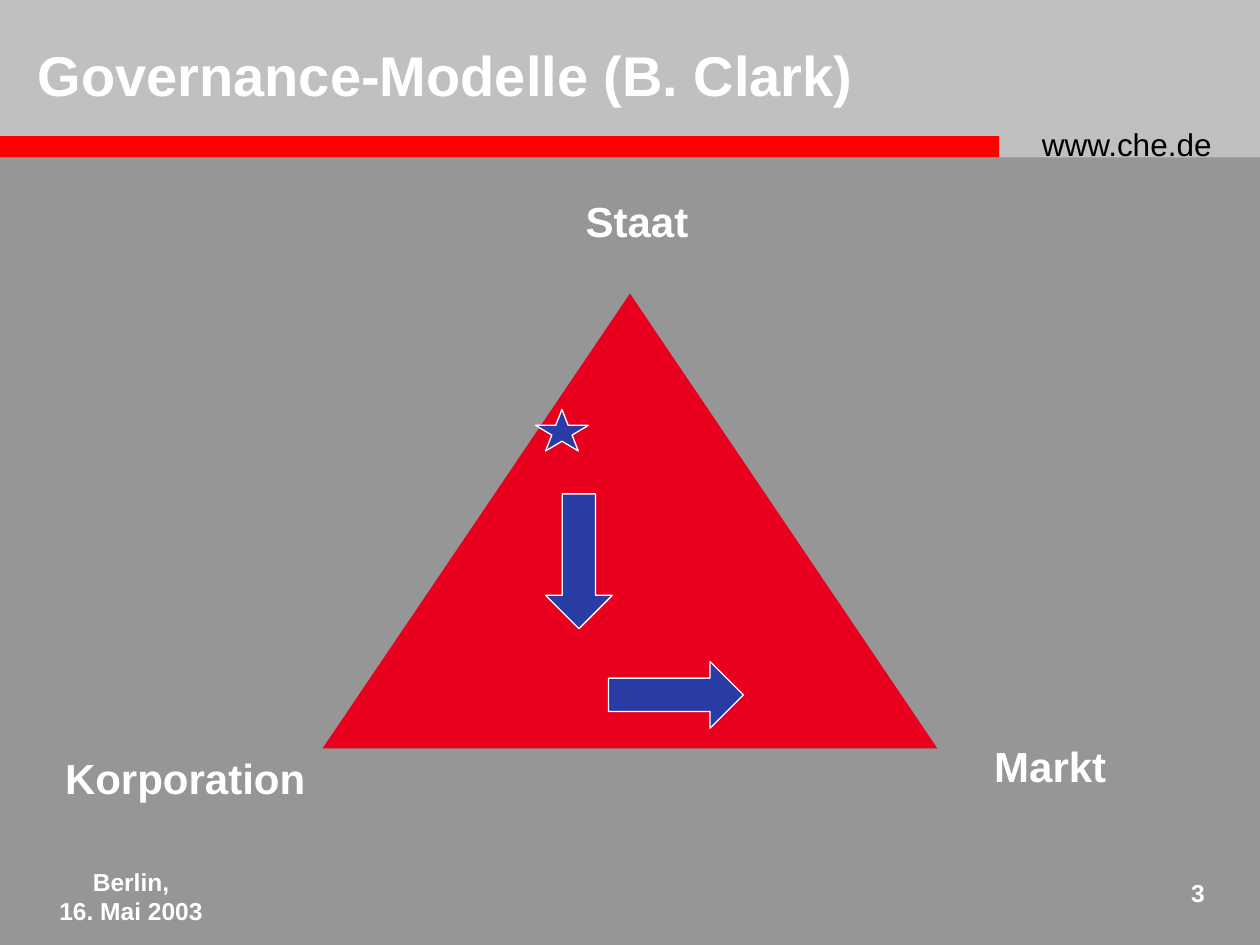
from pptx import Presentation
from pptx.dml.color import RGBColor
from pptx.enum.shapes import MSO_SHAPE as Shape
from pptx.enum.text import MSO_ANCHOR as Anchor, PP_ALIGN as Align
from pptx.util import Inches, Pt

WHITE = RGBColor(0xFF, 0xFF, 0xFF)
BLACK = RGBColor(0, 0, 0)
GREY = RGBColor(0x96, 0x96, 0x96)
SILVER = RGBColor(0xC0, 0xC0, 0xC0)
BAR_RED = RGBColor(0xFF, 0, 0)
TRIANGLE_RED = RGBColor(0xE8, 0, 0x1E)
BLUE = RGBColor(0x29, 0x3B, 0xA5)

WIDTH, HEIGHT = 10, 7.5
HEADER_HEIGHT, BAR_HEIGHT = 1.25, 0.17
ARROW_LENGTH, ARROW_BREADTH = 1.07, 0.53

SHAPES = [
    (Shape.RECTANGLE, (0, 0, WIDTH, HEADER_HEIGHT), SILVER, None),
    (Shape.RECTANGLE, (0, HEADER_HEIGHT - BAR_HEIGHT, 7.93, BAR_HEIGHT), BAR_RED, None),
    (Shape.ISOSCELES_TRIANGLE, (2.56, 2.33, 4.88, 3.61), TRIANGLE_RED, None),
    (Shape.STAR_5_POINT, (4.25, 3.25, 0.42, 0.33), BLUE, WHITE),
    (Shape.DOWN_ARROW, (4.33, 3.92, ARROW_BREADTH, ARROW_LENGTH), BLUE, WHITE),
    (Shape.RIGHT_ARROW, (4.83, 5.25, ARROW_LENGTH, ARROW_BREADTH), BLUE, WHITE),
]

TITLE = ("Governance-Modelle (B. Clark)", (0.2, 0.21, 6.93, 0.75))
ADDRESS = ("www.che.de", (8.17, 0.94, 1.75, 0.4))
CORNERS = [
    ("Staat", (4.4, 1.5, 1.31, 0.5)),
    ("Korporation", (0, 5.92, 2.94, 0.5)),
    ("Markt", (7.67, 5.83, 1.33, 0.5)),
]
DATE = ("Berlin,\n16. Mai 2003", (0, 6.83, 2.08, 0.5))
PAGE_NUMBER = ("3", (9.08, 6.92, 0.58, 0.42))


def add_figure(page, kind, place, fill, line):
    figure = page.shapes.add_shape(kind, *map(Inches, place))
    figure.shadow.inherit = False
    figure.fill.solid()
    figure.fill.fore_color.rgb = fill
    if line is None:
        figure.line.fill.background()
    else:
        figure.line.color.rgb = line
        figure.line.width = Pt(0.75)


def add_text(page, content, size, align=Align.LEFT, anchor=Anchor.TOP,
             color=WHITE, bold=True):
    text, place = content
    frame = page.shapes.add_textbox(*map(Inches, place)).text_frame
    frame.word_wrap = True
    frame.vertical_anchor = anchor
    frame.text = text
    for para in frame.paragraphs:
        para.alignment = align
        para.font.name = "Arial"
        para.font.size = Pt(size)
        para.font.bold = bold
        para.font.color.rgb = color


def main():
    deck = Presentation()
    deck.slide_width, deck.slide_height = Inches(WIDTH), Inches(HEIGHT)
    page = deck.slides.add_slide(deck.slide_layouts[6])
    page.background.fill.solid()
    page.background.fill.fore_color.rgb = GREY

    for figure in SHAPES:
        add_figure(page, *figure)
    add_text(page, TITLE, 32, anchor=Anchor.MIDDLE)
    add_text(page, ADDRESS, 18, color=BLACK, bold=False)
    for corner in CORNERS:
        add_text(page, corner, 24, Align.CENTER, Anchor.MIDDLE)
    add_text(page, DATE, 14, Align.CENTER)
    add_text(page, PAGE_NUMBER, 14, Align.RIGHT)
    deck.save("out.pptx")


if __name__ == "__main__":
    main()
